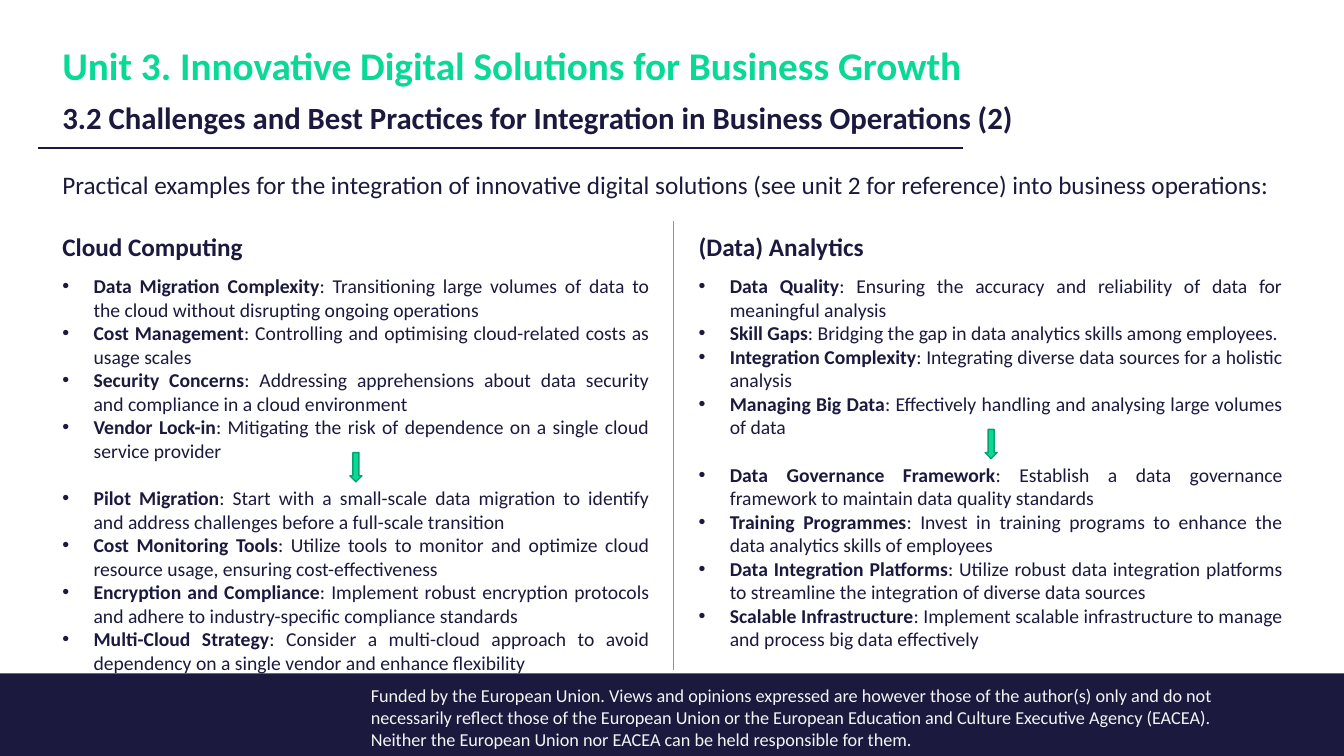
"""Build the slide on integrating cloud computing and data analytics."""
from typing import NamedTuple

from lxml import etree
from pptx import Presentation
from pptx.dml.color import RGBColor
from pptx.enum.shapes import MSO_CONNECTOR, MSO_SHAPE
from pptx.enum.text import MSO_ANCHOR, MSO_AUTO_SIZE, PP_ALIGN
from pptx.oxml.ns import qn
from pptx.util import Inches, Pt

NAVY = RGBColor(0x1B, 0x19, 0x3E)
GREEN = RGBColor(0x0A, 0xD9, 0x95)
DARK_GREEN = RGBColor(0x07, 0xA1, 0x6E)
PALE = RGBColor(0xF5, 0xF5, 0xF5)
RECTANGLE = MSO_SHAPE.RECTANGLE
DOWN_ARROW = MSO_SHAPE.DOWN_ARROW
STRAIGHT = MSO_CONNECTOR.STRAIGHT
BOTTOM = MSO_ANCHOR.BOTTOM
GROW = MSO_AUTO_SIZE.SHAPE_TO_FIT_TEXT
JUSTIFY = PP_ALIGN.JUSTIFY
LEFT = PP_ALIGN.LEFT
BULLET_INDENT = Inches(0.31)
HEADING_GAP = 8.5
GROUP_GAP = 17


class Box(NamedTuple):
    left: float
    top: float
    width: float
    height: float


class Point(NamedTuple):
    term: str
    detail: str


class Topic(NamedTuple):
    box: Box
    heading: str
    challenges: list[Point]
    practices: list[Point]
    arrow: Box


class Rule(NamedTuple):
    start: tuple[float, float]
    end: tuple[float, float]
    colour: RGBColor
    weight: float


TOPICS = [
    Topic(
        Box(0.52, 2.25, 6.02, 4.64),
        "Cloud Computing",
        [
            Point("Data Migration Complexity", "Transitioning large volumes of data to the cloud without disrupting ongoing operations"),
            Point("Cost Management", "Controlling and optimising cloud-related costs as usage scales"),
            Point("Security Concerns", "Addressing apprehensions about data security and compliance in a cloud environment"),
            Point("Vendor Lock-in", "Mitigating the risk of dependence on a single cloud service provider"),
        ],
        [
            Point("Pilot Migration", "Start with a small-scale data migration to identify and address challenges before a full-scale transition"),
            Point("Cost Monitoring Tools", "Utilize tools to monitor and optimize cloud resource usage, ensuring cost-effectiveness"),
            Point("Encryption and Compliance", "Implement robust encryption protocols and adhere to industry-specific compliance standards"),
            Point("Multi-Cloud Strategy", "Consider a multi-cloud approach to avoid dependency on a single vendor and enhance flexibility"),
        ],
        Box(3.47, 4.49, 0.12, 0.29),
    ),
    Topic(
        Box(6.83, 2.25, 5.99, 4.29),
        "(Data) Analytics",
        [
            Point("Data Quality", "Ensuring the accuracy and reliability of data for meaningful analysis"),
            Point("Skill Gaps", "Bridging the gap in data analytics skills among employees."),
            Point("Integration Complexity", "Integrating diverse data sources for a holistic analysis"),
            Point("Managing Big Data", "Effectively handling and analysing large volumes of data"),
        ],
        [
            Point("Data Governance Framework", "Establish a data governance framework to maintain data quality standards"),
            Point("Training Programmes", "Invest in training programs to enhance the data analytics skills of employees"),
            Point("Data Integration Platforms", "Utilize robust data integration platforms to streamline the integration of diverse data sources"),
            Point("Scalable Infrastructure", "Implement scalable infrastructure to manage and process big data effectively"),
        ],
        Box(9.77, 4.26, 0.12, 0.29),
    ),
]
RULES = [
    Rule((0.38, 1.47), (9.55, 1.47), NAVY, 1),
    Rule((6.68, 2.19), (6.68, 6.65), GREEN, 0.5),
]
UNIT = "Unit 3. Innovative Digital Solutions for Business Growth"
SECTION = "3.2 Challenges and Best Practices for Integration in Business Operations (2)"
INTRO = (
    "Practical examples for the integration of innovative digital solutions "
    "(see unit 2 for reference) into business operations:"
)
FUNDING = (
    "Funded by the European Union. Views and opinions expressed are however those of the "
    "author(s) only and do not necessarily reflect those of the European Union or the European "
    "Education and Culture Executive Agency (EACEA). Neither the European Union nor EACEA can "
    "be held responsible for them."
)


def add_frame(slide, box: Box, **settings):
    """Add a wrapping text box and return its text frame."""
    frame = slide.shapes.add_textbox(*map(Inches, box)).text_frame
    for name, value in ({"word_wrap": True, "auto_size": GROW} | settings).items():
        setattr(frame, name, value)
    return frame


def add_run(paragraph, text: str, size: float, colour: RGBColor = NAVY, bold: bool = False) -> None:
    """Add a run in the slide's font."""
    run = paragraph.add_run()
    run.text = text
    for name, value in {"name": "Calibri", "size": Pt(size), "bold": bold}.items():
        setattr(run.font, name, value)
    run.font.color.rgb = colour


def add_point(frame, point: Point, gap: float) -> None:
    """Add a bulleted paragraph with a bold term."""
    paragraph = frame.add_paragraph()
    properties = paragraph._p.get_or_add_pPr()
    properties.set("marL", str(BULLET_INDENT))
    properties.set("indent", str(-BULLET_INDENT))
    etree.SubElement(properties, qn("a:buFont")).set("typeface", "Arial")
    etree.SubElement(properties, qn("a:buChar")).set("char", "•")
    for name, value in {"alignment": JUSTIFY, "space_before": Pt(gap)}.items():
        setattr(paragraph, name, value)
    add_run(paragraph, point.term, 14, bold=True)
    add_run(paragraph, f": {point.detail}", 14)


def add_solid(slide, preset, box: Box, fill: RGBColor, outline: RGBColor | None = None) -> None:
    """Add a filled preset shape, outlined if a colour is given."""
    solid = slide.shapes.add_shape(preset, *map(Inches, box))
    solid.shadow.inherit = False
    solid.fill.solid()
    solid.fill.fore_color.rgb = fill
    if outline is None:
        solid.line.fill.background()
    else:
        solid.line.color.rgb = outline
        solid.line.width = Pt(1)


def add_rule(slide, rule: Rule) -> None:
    """Add a straight line without a shadow."""
    line = slide.shapes.add_connector(STRAIGHT, *map(Inches, rule.start + rule.end))
    line.line.color.rgb = rule.colour
    line.line.width = Pt(rule.weight)
    etree.SubElement(line._element.spPr, qn("a:effectLst"))


def add_topic(slide, topic: Topic) -> None:
    """Add a column of challenges leading to practices."""
    frame = add_frame(slide, topic.box)
    heading = frame.paragraphs[0]
    heading.alignment = JUSTIFY
    add_run(heading, topic.heading, 18, bold=True)
    for points, group_gap in ((topic.challenges, HEADING_GAP), (topic.practices, GROUP_GAP)):
        for index, point in enumerate(points):
            add_point(frame, point, 0 if index else group_gap)
    add_solid(slide, DOWN_ARROW, topic.arrow, GREEN, DARK_GREEN)


def main() -> None:
    """Build and save the slide."""
    deck = Presentation()
    deck.slide_width, deck.slide_height = Inches(13.33), Inches(7.5)
    slide = deck.slides.add_slide(deck.slide_layouts[6])
    add_solid(slide, RECTANGLE, Box(0, 6.68, 13.33, 0.82), NAVY)

    title = add_frame(slide, Box(0.52, 0.5, 9.98, 0.9), auto_size=MSO_AUTO_SIZE.NONE, vertical_anchor=BOTTOM)
    unit, section = title.paragraphs[0], title.add_paragraph()
    unit.line_spacing = section.line_spacing = 0.9
    section.space_before = Pt(10)
    add_run(unit, UNIT, 28, GREEN, bold=True)
    add_run(section, SECTION, 22, bold=True)

    for box, text, size, colour, alignment in (
        (Box(3.58, 6.74, 8.84, 0.76), FUNDING, 13, PALE, LEFT),
        (Box(0.52, 1.63, 12.3, 0.4), INTRO, 18, NAVY, JUSTIFY),
    ):
        paragraph = add_frame(slide, box).paragraphs[0]
        paragraph.alignment = alignment
        add_run(paragraph, text, size, colour)
    for topic in TOPICS:
        add_topic(slide, topic)
    for rule in RULES:
        add_rule(slide, rule)
    deck.save("out.pptx")


if __name__ == "__main__":
    main()
